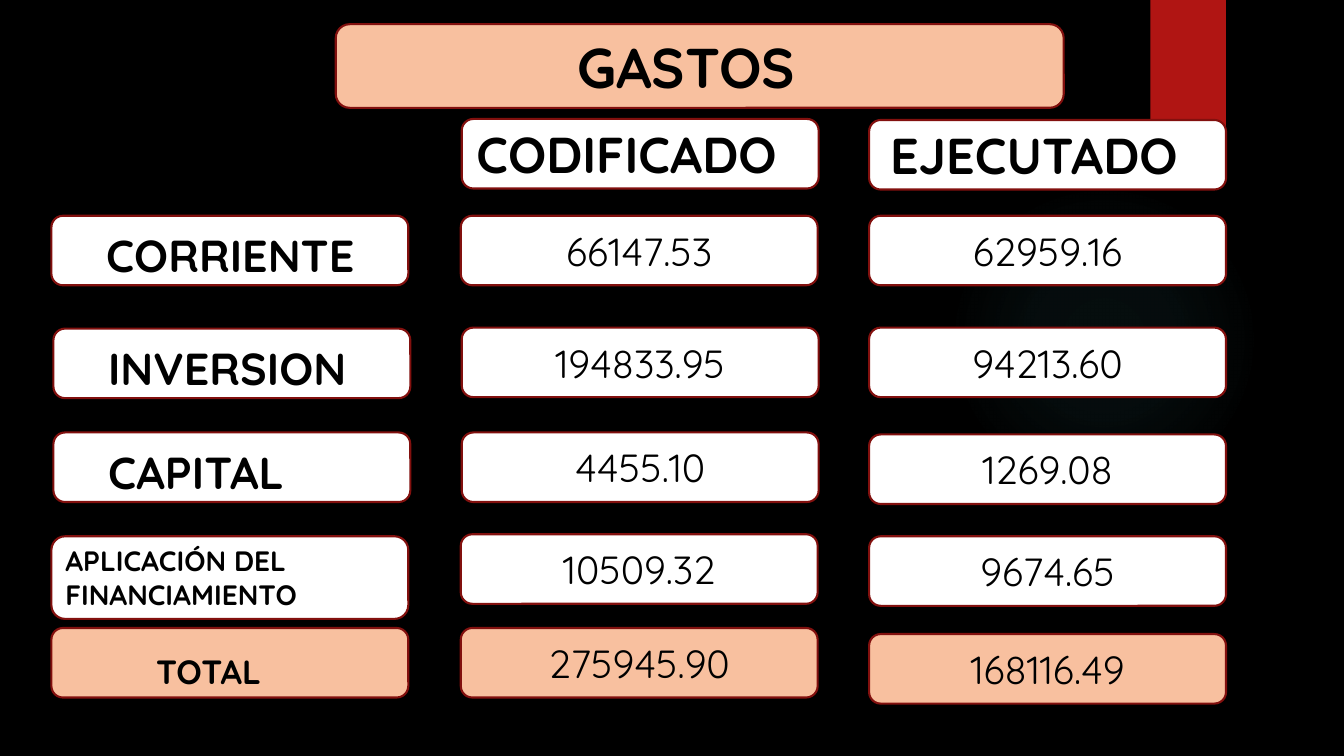
import pptx
import pptx.util
import pptx.dml.color
import pptx.enum.shapes
import pptx.enum.text
import pptx.oxml
import pptx.oxml.ns

Inches, Pt = pptx.util.Inches, pptx.util.Pt
KIND = pptx.enum.shapes.MSO_SHAPE
ALIGN = pptx.enum.text.PP_ALIGN
BLACK, WHITE, PEACH, RED, WINE = "000000", "FFFFFF", "F8C09F", "B01513", "82100E"
WIDE, HIGH = 3.54, 0.69


def paint(fill, color):
    fill.solid()
    fill.fore_color.rgb = pptx.dml.color.RGBColor.from_string(color)


def box(text, left, top, size, wide=WIDE, high=HIGH, color=WHITE, bold=True,
        align=ALIGN.CENTER, lead=0.1, trail=0.1, drop=0):
    card = slide.shapes.add_shape(KIND.ROUNDED_RECTANGLE, Inches(left), Inches(top),
                                  Inches(wide), Inches(high))
    card.shadow.inherit = False
    paint(card.fill, color)
    paint(card.line.fill, WINE)
    card.line.width = Pt(1.5)
    frame = card.text_frame
    frame.word_wrap = True
    frame.vertical_anchor = pptx.enum.text.MSO_ANCHOR.MIDDLE
    frame.margin_left, frame.margin_right = Inches(lead), Inches(trail)
    frame.margin_top, frame.margin_bottom = Inches(drop), 0
    para = frame.paragraphs[0]
    para.text = text
    para.alignment = align
    para.font.name = "Quicksand"
    para.font.size = Pt(size)
    para.font.bold = bold
    paint(para.font.fill, BLACK)


deck = pptx.Presentation()
deck.slide_width, deck.slide_height = Inches(13.33), Inches(7.5)
slide = deck.slides.add_slide(deck.slide_layouts[6])
paint(slide.background.fill, BLACK)

# Faint glow
glow = slide.shapes.add_shape(KIND.OVAL, Inches(9.41), Inches(1.83), Inches(3.08), Inches(3.08))
glow.shadow.inherit = False
glow.line.fill.background()
stops = "".join(
    f'<a:gs pos="{pos}000"><a:srgbClr val="50B9C1"><a:alpha val="{alpha}000"/></a:srgbClr></a:gs>'
    for pos, alpha in ((0, 7), (36, 6), (69, 0), (100, 0)))
grad = pptx.oxml.parse_xml(
    f'<a:gradFill {pptx.oxml.ns.nsdecls("a")}><a:gsLst>{stops}</a:gsLst><a:path path="circle">'
    '<a:fillToRect l="50000" t="50000" r="50000" b="50000"/></a:path></a:gradFill>')
glow.element.spPr.find(pptx.oxml.ns.qn("a:prstGeom")).addnext(grad)

# Red ribbon
ribbon = slide.shapes.add_shape(KIND.RECTANGLE, Inches(11.41), 0, Inches(0.75), Inches(1.25))
ribbon.shadow.inherit = False
paint(ribbon.fill, RED)
ribbon.line.fill.background()

# Title and column heads
box("GASTOS", 3.33, 0.24, 40, wide=7.22, high=0.83, color=PEACH, trail=0.37)
box("CODIFICADO", 4.58, 1.18, 36, trail=0.37)
box("EJECUTADO", 8.62, 1.19, 36, trail=0.37)

# Row labels
for label, left, top in (("CORRIENTE", 0.51, 2.14), ("INVERSION", 0.53, 3.26),
                         ("CAPITAL", 0.53, 4.29)):
    box(label, left, top, 32, align=ALIGN.LEFT, lead=0.51, drop=0.08)
box("APLICACIÓN DEL FINANCIAMIENTO", 0.51, 5.32, 20, high=0.82, align=ALIGN.LEFT)
box("TOTAL", 0.51, 6.23, 24, color=PEACH, trail=0.52, drop=0.17)

# Amounts: codificado left, top and value, then ejecutado top and value
rows = (
    (4.57, 2.14, "66147.53", 2.14, "62959.16"),
    (4.58, 3.25, "194833.95", 3.25, "94213.60"),
    (4.58, 4.29, "4455.10", 4.31, "1269.08"),
    (4.57, 5.30, "10509.32", 5.32, "9674.65"),
    (4.57, 6.23, "275945.90", 6.29, "168116.49"),
)
for row in rows:
    left, top, coded, low, spent = row
    color = PEACH if row is rows[-1] else WHITE
    box(coded, left, top, 28, color=color, bold=False)
    box(spent, 8.62, low, 28, color=color, bold=False)

deck.save("out.pptx")
